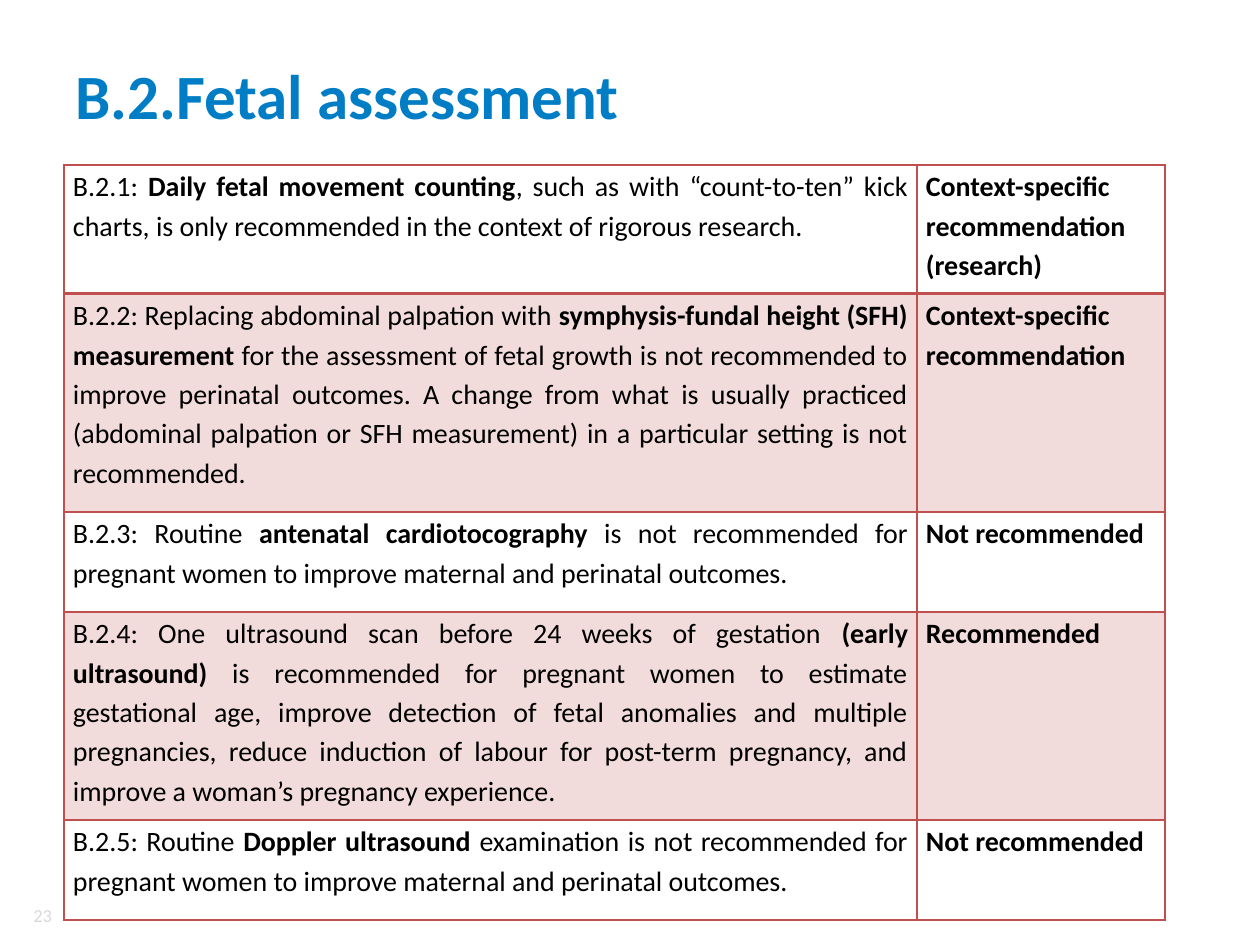
import pptx
import pptx.dml.color
import pptx.enum.text
import pptx.oxml
import pptx.oxml.ns
import pptx.util

PX = 914400 / 126
FONT = "Calibri"
RED, PINK, WHITE, BLACK = "C0504D", "F2DCDB", "FFFFFF", "000000"
ALIGN = pptx.enum.text.PP_ALIGN
MIDDLE = pptx.enum.text.MSO_ANCHOR.MIDDLE

COLUMN_WIDTHS = (853, 248)
# Row height, (plain, bold, plain) recommendation, verdict
RECOMMENDATIONS = [
    (129, ("B.2.1: ", "Daily fetal movement counting",
           ", such as with “count-to-ten” kick charts, is only recommended in the "
           "context of rigorous research."),
     "Context-specific recommendation (research)"),
    (218, ("B.2.2: Replacing abdominal palpation with ",
           "symphysis-fundal height (SFH) measurement",
           " for the assessment of fetal growth is not recommended to improve perinatal "
           "outcomes. A change from what is usually practiced (abdominal palpation or SFH "
           "measurement) in a particular setting is not recommended."),
     "Context-specific recommendation"),
    (100, ("B.2.3: Routine ", "antenatal cardiotocography",
           " is not recommended for pregnant women to improve maternal and perinatal "
           "outcomes."),
     "Not recommended"),
    (208, ("B.2.4: One ultrasound scan before 24 weeks of gestation ",
           "(early ultrasound)",
           " is recommended for pregnant women to estimate gestational age, improve "
           "detection of fetal anomalies and multiple pregnancies, reduce induction of "
           "labour for post-term pregnancy, and improve a woman’s pregnancy experience."),
     "Recommended"),
    (100, ("B.2.5: Routine ", "Doppler ultrasound",
           " examination is not recommended for pregnant women to improve maternal and "
           "perinatal outcomes."),
     "Not recommended"),
]


def px(length):
    return pptx.util.Emu(round(length * PX))


def rgb(color):
    return pptx.dml.color.RGBColor.from_string(color)


def set_attributes(target, values):
    for name, value in values.items():
        setattr(target, name, value)


def add_run(paragraph, text, size, color, bold=False):
    run = paragraph.add_run()
    run.text = text
    set_attributes(run.font, {"name": FONT, "size": pptx.util.Pt(size), "bold": bold})
    run.font.color.rgb = rgb(color)


def set_borders(cell, widths):
    """Draw the cell's edges; widths maps L, R, T, B, in that order, to points."""
    properties = cell._tc.get_or_add_tcPr()
    for index, (side, width) in enumerate(widths.items()):
        line = pptx.oxml.parse_xml(
            f'<a:ln{side} {pptx.oxml.ns.nsdecls("a")} w="{pptx.util.Pt(width)}">'
            f'<a:solidFill><a:srgbClr val="{RED}"/></a:solidFill></a:ln{side}>')
        properties.insert(index, line)


def fill_cell(cell, parts, align, fill, borders):
    cell.fill.solid()
    cell.fill.fore_color.rgb = rgb(fill)
    set_borders(cell, borders)
    set_attributes(cell, {"margin_left": px(9), "margin_right": px(9),
                          "margin_top": 0, "margin_bottom": 0})
    paragraph = cell.text_frame.paragraphs[0]
    set_attributes(paragraph, {"alignment": align, "line_spacing": 1.15})
    for text, bold in parts:
        add_run(paragraph, text, 16, BLACK, bold)


def place_title(slide, left, top, width, height):
    title = slide.shapes.title
    set_attributes(title, {"left": px(left), "top": px(top),
                           "width": px(width), "height": px(height)})
    title.text_frame.vertical_anchor = MIDDLE
    paragraph = title.text_frame.paragraphs[0]
    paragraph.alignment = ALIGN.LEFT
    add_run(paragraph, "B.2.Fetal assessment", 36, "007DC5", True)


def add_recommendations(slide, left, top):
    heights = [height for height, _, _ in RECOMMENDATIONS]
    table = slide.shapes.add_table(
        len(heights), len(COLUMN_WIDTHS), px(left), px(top),
        px(sum(COLUMN_WIDTHS)), px(sum(heights))).table
    set_attributes(table, {"first_row": False, "horz_banding": False})
    for column, width in zip(table.columns, COLUMN_WIDTHS):
        column.width = px(width)
    for index, (height, recommendation, verdict) in enumerate(RECOMMENDATIONS):
        table.rows[index].height = px(height)
        fill = PINK if index % 2 else WHITE
        borders = {"L": 1, "R": 1, "T": 2 if index == 1 else 1,
                   "B": 2 if index == 0 else 1}
        fill_cell(table.cell(index, 0), zip(recommendation, (False, True, False)),
                  ALIGN.JUSTIFY, fill, borders)
        fill_cell(table.cell(index, 1), [(verdict, True)], ALIGN.LEFT, fill, borders)


def add_page_number(slide, left, top, width, height):
    number = slide.shapes.add_textbox(px(left), px(top), px(width), px(height))
    frame = number.text_frame
    set_attributes(frame, {"word_wrap": True, "vertical_anchor": MIDDLE,
                           "margin_left": 0, "margin_right": 0,
                           "margin_top": 0, "margin_bottom": 0})
    frame.paragraphs[0].alignment = ALIGN.RIGHT
    add_run(frame.paragraphs[0], "23", 10.5, "D9D9D9")


def main():
    deck = pptx.Presentation()
    set_attributes(deck, {"slide_width": px(1260), "slide_height": px(945)})
    slide = deck.slides.add_slide(deck.slide_layouts[5])
    add_page_number(slide, 15, 900, 37, 30)
    place_title(slide, 63, 38, 1134, 113)
    add_recommendations(slide, 64, 165)
    deck.save("out.pptx")


if __name__ == "__main__":
    main()
